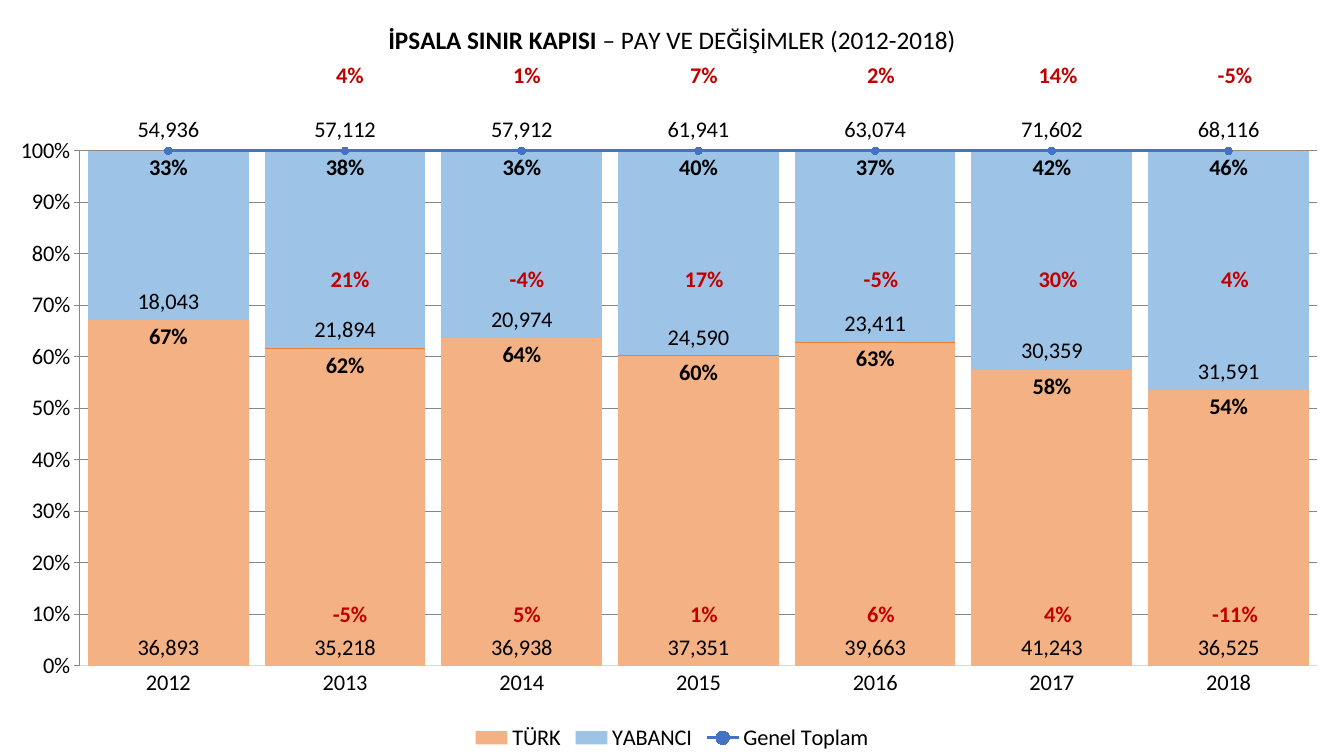
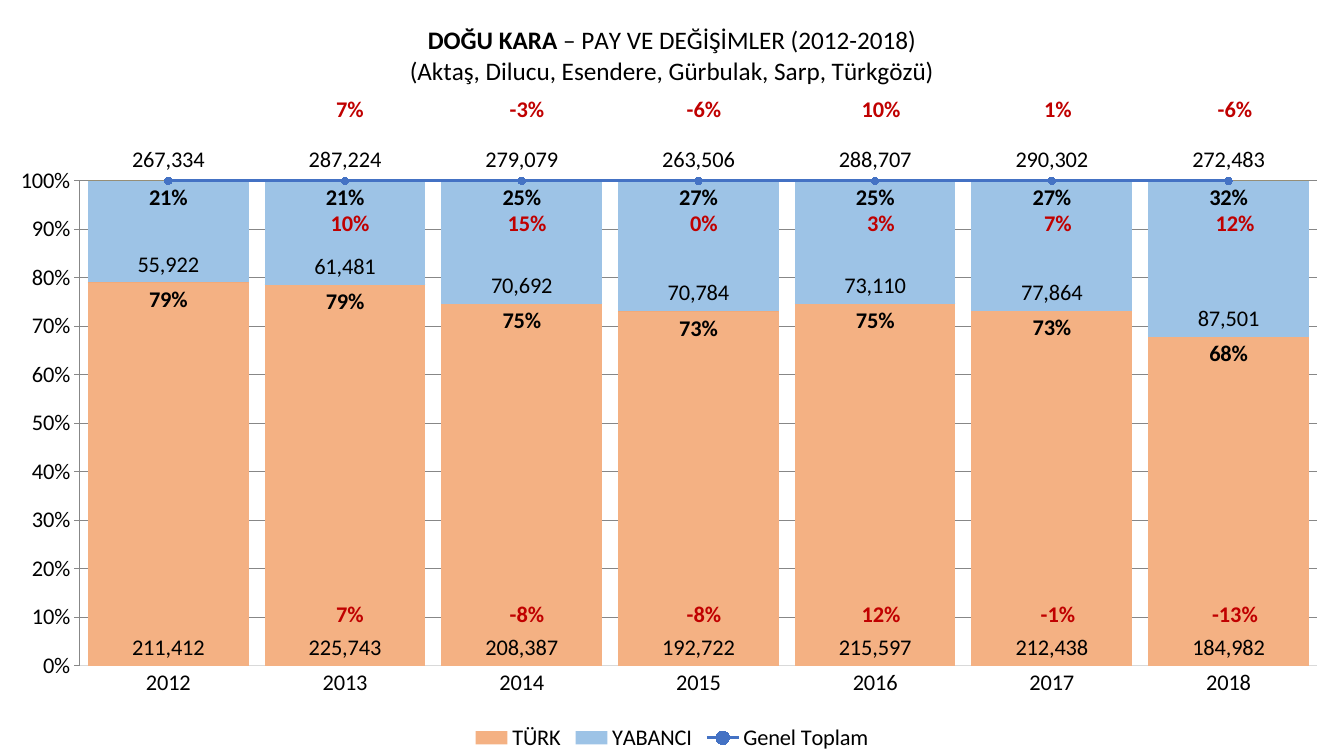
from pptx import Presentation
from pptx import util as u
from pptx.chart import data as chart_data
from pptx.dml.color import RGBColor
from pptx.enum import chart as charts
from pptx.oxml import ns, parse_xml

# Shared style
WIDTH, HEIGHT = 1344, 756
EMU_PER_PX = 12192000 / WIDTH
FONT = "Calibri"
BODY_SIZE, TITLE_SIZE = u.Pt(16), u.Pt(18)
BLACK = RGBColor(0x00, 0x00, 0x00)
GRID_GREY = RGBColor(0xD9, 0xD9, 0xD9)
CHANGE_RED = RGBColor(0xC0, 0x00, 0x00)
LINE_BLUE = RGBColor(0x44, 0x72, 0xC4)
BAR_COLOURS = [RGBColor(0xF4, 0xB1, 0x83), RGBColor(0xED, 0x7D, 0x31),
               RGBColor(0x9D, 0xC3, 0xE6), RGBColor(0xFF, 0xC0, 0x00)]

# Plot area and the row of yearly changes
PLOT_LEFT, PLOT_RIGHT, PLOT_BOTTOM = 80, 1317, 666
CHANGE_LEFT, CHANGE_WIDTH, CHANGE_HEIGHT = 317, 1005, 37
FIRST_TAB, TAB_PITCH = 33, 177

# Content
YEARS = [str(year) for year in range(2012, 2019)]
SUBJECT = " – PAY VE DEĞİŞİMLER (2012-2018)"
GATES = [
    dict(name="İPSALA SINIR KAPISI", subtitle=None, plot_top=151,
         turkish=[36893, 35218, 36938, 37351, 39663, 41243, 36525],
         foreign=[18043, 21894, 20974, 24590, 23411, 30359, 31591],
         change_tops=(595, 260, 56)),
    dict(name="DOĞU KARA",
         subtitle="(Aktaş, Dilucu, Esendere, Gürbulak, Sarp, Türkgözü)",
         plot_top=181,
         turkish=[211412, 225743, 208387, 192722, 215597, 212438, 184982],
         foreign=[55922, 61481, 70692, 70784, 73110, 77864, 87501],
         change_tops=(595, 204, 90)),
]


def px(length):
    return u.Emu(round(length * EMU_PER_PX))


def shares(values, totals):
    return [round(value / total, 2) for value, total in zip(values, totals)]


def changes(values):
    return [f"{new / old - 1:.0%}" for old, new in zip(values, values[1:])]


class GateDeck:
    """Holds the deck, its style and the current slide."""

    def __init__(self):
        self.deck = Presentation()
        self.deck.slide_width, self.deck.slide_height = px(WIDTH), px(HEIGHT)
        self.page = None

    def new_page(self):
        self.page = self.deck.slides.add_slide(self.deck.slide_layouts[6])

    def style_font(self, font, size=BODY_SIZE, colour=BLACK, bold=False):
        font.name, font.size, font.bold = FONT, size, bold
        font.color.rgb = colour

    # Chart and its parts
    def share_chart(self, turkish, foreign, totals, plot_top):
        data = chart_data.CategoryChartData(number_format="#,##0")
        data.categories = YEARS
        data.add_series("TÜRK", turkish)
        data.add_series("Series 2", shares(turkish, totals), "0%")
        data.add_series("YABANCI", foreign)
        data.add_series("Series 4", shares(foreign, totals), "0%")
        data.add_series("Genel Toplam", totals)
        frame = self.page.shapes.add_chart(
            charts.XL_CHART_TYPE.COLUMN_STACKED_100, 0, 0, px(WIDTH), px(HEIGHT), data)
        chart = frame.chart
        self.style_font(chart.font)
        self.total_line(chart)
        self.bars(chart.plots[0])
        self.axes(chart)
        self.legend(chart)
        self.place_plot(chart, plot_top)
        return chart

    def labels(self, series, position, number_format="#,##0", bold=False):
        labels = series.data_labels
        labels.show_value = True
        labels.number_format = number_format
        labels.number_format_is_linked = False
        labels.position = position
        self.style_font(labels.font, bold=bold)

    def bars(self, plot):
        plot.gap_width, plot.overlap = 10, 100
        plot.vary_by_categories = False
        position = charts.XL_LABEL_POSITION
        for index, (series, colour) in enumerate(zip(plot.series, BAR_COLOURS)):
            series.format.fill.solid()
            series.format.fill.fore_color.rgb = colour
            if index % 2:
                self.labels(series, position.INSIDE_END, "0%", bold=True)
            else:
                self.labels(series, position.INSIDE_BASE)

    def total_line(self, chart):
        # Move the last series to a line plot on hidden secondary axes
        plot_area = chart._chartSpace.xpath(".//c:plotArea")[0]
        bar_plot = plot_area.xpath("c:barChart")[0]
        total = bar_plot.xpath("c:ser")[-1]
        for flag in total.xpath("c:invertIfNegative"):
            total.remove(flag)
        line_plot = parse_xml(
            f'<c:lineChart {ns.nsdecls("c")}><c:grouping val="percentStacked"/>'
            '<c:varyColors val="0"/><c:marker val="1"/>'
            '<c:axId val="5001"/><c:axId val="5002"/></c:lineChart>')
        line_plot.insert(2, total)
        bar_plot.addnext(line_plot)
        last_axis = plot_area.xpath("c:valAx")[-1]
        for kind, own, other, side, crosses in (
                ("catAx", 5001, 5002, "b", "autoZero"),
                ("valAx", 5002, 5001, "r", "max")):
            last_axis.addnext(parse_xml(
                f'<c:{kind} {ns.nsdecls("c")}><c:axId val="{own}"/>'
                '<c:scaling><c:orientation val="minMax"/></c:scaling>'
                f'<c:delete val="1"/><c:axPos val="{side}"/>'
                f'<c:crossAx val="{other}"/><c:crosses val="{crosses}"/></c:{kind}>'))

        series = chart.plots[1].series[0]
        series.smooth = False
        series.format.line.color.rgb = LINE_BLUE
        series.format.line.width = u.Pt(2.25)
        series.marker.style = charts.XL_MARKER_STYLE.CIRCLE
        series.marker.size = 5
        series.marker.format.fill.solid()
        series.marker.format.fill.fore_color.rgb = LINE_BLUE
        series.marker.format.line.color.rgb = LINE_BLUE
        self.labels(series, charts.XL_LABEL_POSITION.ABOVE)

    def axes(self, chart):
        years, percents = chart.category_axis, chart.value_axis
        for axis in (years, percents):
            axis.major_tick_mark = axis.minor_tick_mark = charts.XL_TICK_MARK.NONE
            self.style_font(axis.tick_labels.font)
        percents.tick_labels.number_format = "0%"
        percents.tick_labels.number_format_is_linked = False
        percents.format.line.fill.background()
        percents.has_major_gridlines = True
        for line in (years.format.line, percents.major_gridlines.format.line):
            line.color.rgb = GRID_GREY
            line.width = u.Pt(0.75)

    def legend(self, chart):
        chart.has_legend = True
        legend = chart.legend
        legend.position = charts.XL_LEGEND_POSITION.BOTTOM
        legend.include_in_layout = False
        self.style_font(legend.font)
        # Leave the two share series out of the legend
        place = chart._chartSpace.xpath(".//c:legend/c:legendPos")[0]
        for index in (3, 1):
            place.addnext(parse_xml(
                f'<c:legendEntry {ns.nsdecls("c")}><c:idx val="{index}"/>'
                '<c:delete val="1"/></c:legendEntry>'))

    def place_plot(self, chart, top):
        plot_area = chart._chartSpace.xpath(".//c:plotArea")[0]
        for layout in plot_area.xpath("c:layout"):
            plot_area.remove(layout)
        fractions = dict(x=PLOT_LEFT / WIDTH, y=top / HEIGHT,
                         w=(PLOT_RIGHT - PLOT_LEFT) / WIDTH,
                         h=(PLOT_BOTTOM - top) / HEIGHT)
        values = "".join(f'<c:{key} val="{value:.4f}"/>' for key, value in fractions.items())
        plot_area.insert(0, parse_xml(
            f'<c:layout {ns.nsdecls("c")}><c:manualLayout>'
            '<c:layoutTarget val="inner"/><c:xMode val="edge"/><c:yMode val="edge"/>'
            f'{values}</c:manualLayout></c:layout>'))

    def title(self, chart, name, subtitle):
        chart.has_title = True
        frame = chart.chart_title.text_frame
        lines = [[(name, True), (SUBJECT, False)]]
        if subtitle:
            lines.append([(subtitle, False)])
        for index, line in enumerate(lines):
            para = frame.add_paragraph() if index else frame.paragraphs[0]
            self.style_font(para.font, TITLE_SIZE)
            for words, bold in line:
                span = para.add_run()
                span.text, span.font.bold = words, bold

    # One row of yearly changes, centred on tab stops
    def change_row(self, top, values):
        box = self.page.shapes.add_textbox(
            px(CHANGE_LEFT), px(top), px(CHANGE_WIDTH), px(CHANGE_HEIGHT))
        frame = box.text_frame
        frame.word_wrap = True
        frame.margin_left = frame.margin_right = 0
        para = frame.paragraphs[0]
        para.text = "".join(f"\t{value}" for value in values)
        self.style_font(para.font, colour=CHANGE_RED, bold=True)
        stops = "".join(f'<a:tab pos="{px(FIRST_TAB + TAB_PITCH * index)}" algn="ctr"/>'
                        for index in range(len(values)))
        para._p.get_or_add_pPr().insert(
            0, parse_xml(f'<a:tabLst {ns.nsdecls("a")}>{stops}</a:tabLst>'))


def main():
    gates = GateDeck()
    for gate in GATES:
        turkish, foreign = gate["turkish"], gate["foreign"]
        totals = [sum(pair) for pair in zip(turkish, foreign)]
        gates.new_page()
        chart = gates.share_chart(turkish, foreign, totals, gate["plot_top"])
        gates.title(chart, gate["name"], gate["subtitle"])
        for top, values in zip(gate["change_tops"], (turkish, foreign, totals)):
            gates.change_row(top, changes(values))
    gates.deck.save("out.pptx")


if __name__ == "__main__":
    main()
